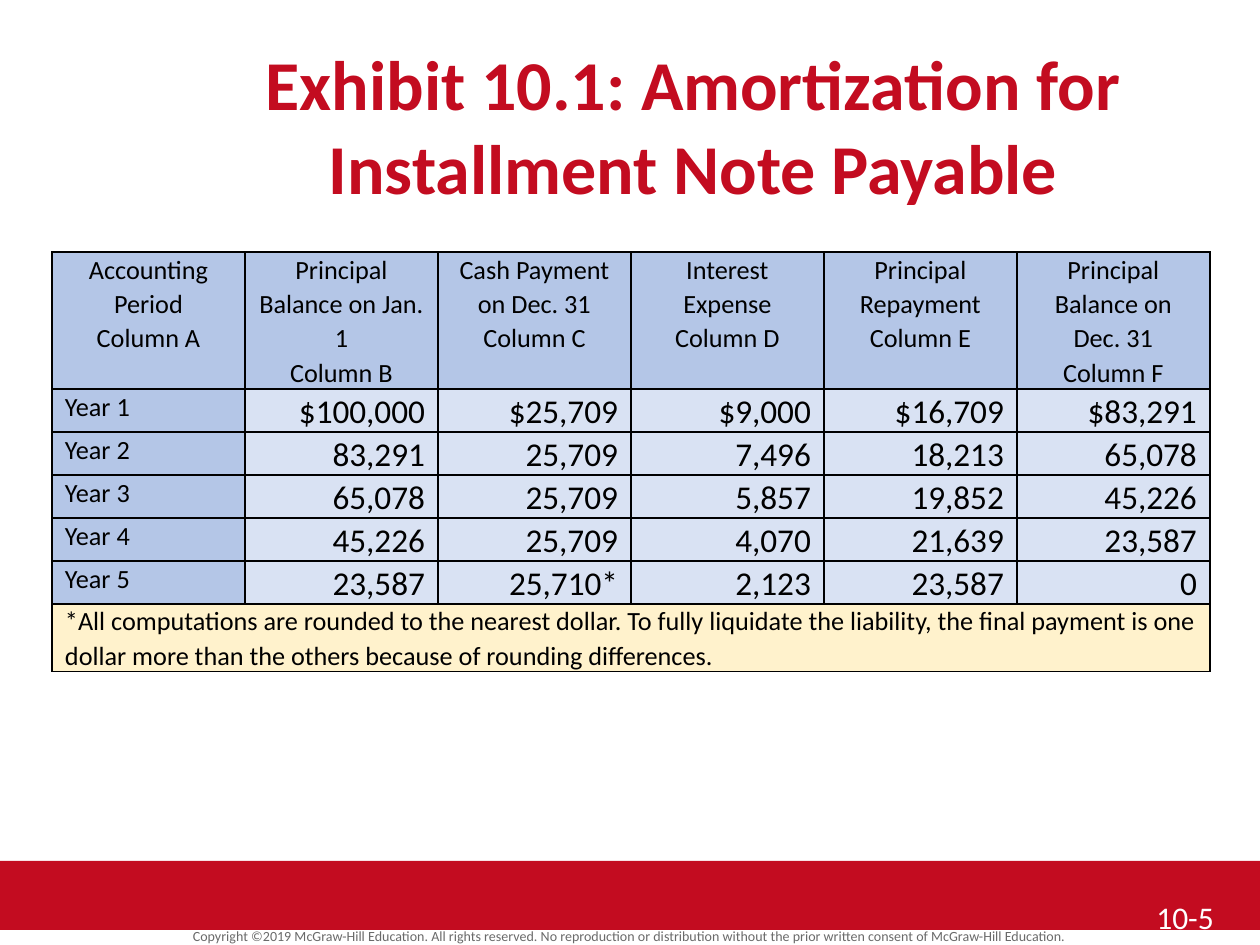
from lxml.etree import SubElement
from pptx import Presentation
from pptx.dml.color import RGBColor
from pptx.enum.shapes import MSO_SHAPE
from pptx.enum.text import PP_ALIGN as Align
from pptx.oxml.ns import qn
from pptx.util import Pt

PX = 914400 // 126
FONT = "Calibri"

RED = RGBColor(0xC3, 0x0C, 0x20)
GRAY = RGBColor(0x6A, 0x6A, 0x6A)
WHITE = RGBColor(0xFF, 0xFF, 0xFF)
BLACK = RGBColor(0x00, 0x00, 0x00)
HEADER_BLUE = RGBColor(0xB4, 0xC6, 0xE7)
BODY_BLUE = RGBColor(0xD9, 0xE2, 0xF3)
NOTE_YELLOW = RGBColor(0xFF, 0xF2, 0xCC)

TITLE = "Exhibit 10.1: Amortization for Installment Note Payable"
COPYRIGHT = ("Copyright ©2019 McGraw-Hill Education. All rights reserved. No reproduction or "
             "distribution without the prior written consent of McGraw-Hill Education.")
PAGE_NUMBER = "10-5"
HEADERS = [
    ["Accounting Period", "Column A"],
    ["Principal Balance on Jan. 1", "Column B"],
    ["Cash Payment on Dec. 31 Column C"],
    ["Interest Expense Column D"],
    ["Principal Repayment Column E"],
    ["Principal Balance on Dec. 31 Column F"],
]
YEARS = [
    ("Year 1", "$100,000", "$25,709", "$9,000", "$16,709", "$83,291"),
    ("Year 2", "83,291", "25,709", "7,496", "18,213", "65,078"),
    ("Year 3", "65,078", "25,709", "5,857", "19,852", "45,226"),
    ("Year 4", "45,226", "25,709", "4,070", "21,639", "23,587"),
    ("Year 5", "23,587", "25,710*", "2,123", "23,587", "0"),
]
FOOTNOTE = ("*All computations are rounded to the nearest dollar. To fully liquidate the liability, "
            "the final payment is one dollar more than the others because of rounding differences.")

TABLE_LEFT, TABLE_TOP, COLUMN_WIDTH = 52, 252, 193
ROW_HEIGHTS = [137] + [43] * len(YEARS) + [68]


def px(*lengths):
    return [length * PX for length in lengths]


def write(frame, lines, size, color, align, spacing=1.0, bold=False):
    frame.word_wrap = True
    for index, line in enumerate(lines):
        para = frame.paragraphs[0] if index == 0 else frame.add_paragraph()
        para.alignment = align
        para.line_spacing = spacing
        span = para.add_run()
        span.text = line
        span.font.name = FONT
        span.font.size = Pt(size)
        span.font.bold = bold
        span.font.color.rgb = color


def add_text(page, place, text, *style, **options):
    box = page.shapes.add_textbox(*px(*place))
    write(box.text_frame, [text], *style, **options)


def add_borders(cell):
    properties = cell._tc.get_or_add_tcPr()
    for side in ("a:lnL", "a:lnR", "a:lnT", "a:lnB"):
        line = SubElement(properties, qn(side), w=str(Pt(1)))
        fill = SubElement(line, qn("a:solidFill"))
        SubElement(fill, qn("a:srgbClr"), val=str(BLACK))


def fill_cell(cell, lines, size, align, color):
    cell.margin_left, cell.margin_right = px(13, 13)
    cell.margin_top = cell.margin_bottom = 0
    add_borders(cell)
    cell.fill.solid()
    cell.fill.fore_color.rgb = color
    write(cell.text_frame, lines, size, BLACK, align, spacing=1.07)


def add_schedule(page):
    columns = len(HEADERS)
    place = px(TABLE_LEFT, TABLE_TOP, COLUMN_WIDTH * columns, sum(ROW_HEIGHTS))
    table = page.shapes.add_table(len(ROW_HEIGHTS), columns, *place).table
    table.first_row = table.horz_banding = False
    for column in table.columns:
        column.width = COLUMN_WIDTH * PX
    for row, height in zip(table.rows, ROW_HEIGHTS):
        row.height = height * PX

    for column, lines in enumerate(HEADERS):
        fill_cell(table.cell(0, column), lines, 15, Align.CENTER, HEADER_BLUE)
    for row, (year, *amounts) in enumerate(YEARS, start=1):
        fill_cell(table.cell(row, 0), [year], 15, Align.LEFT, HEADER_BLUE)
        for column, amount in enumerate(amounts, start=1):
            fill_cell(table.cell(row, column), [amount], 19, Align.RIGHT, BODY_BLUE)

    last = len(ROW_HEIGHTS) - 1
    table.cell(last, 0).merge(table.cell(last, columns - 1))
    fill_cell(table.cell(last, 0), [FOOTNOTE], 15, Align.LEFT, NOTE_YELLOW)
    for column in range(1, columns):
        add_borders(table.cell(last, column))


def main():
    deck = Presentation()
    deck.slide_width, deck.slide_height = px(1260, 945)
    page = deck.slides.add_slide(deck.slide_layouts[6])

    band = page.shapes.add_shape(MSO_SHAPE.RECTANGLE, *px(0, 861, 1260, 69))
    band.shadow.inherit = False
    band.fill.solid()
    band.fill.fore_color.rgb = RED
    band.line.fill.background()

    add_text(page, (0, 925, 1260, 24), COPYRIGHT, 8, GRAY, Align.CENTER, spacing=0.8)
    add_text(page, (126, 34, 1134, 84), TITLE, 40, RED, Align.CENTER, bold=True)
    add_text(page, (1144, 892, 116, 53), PAGE_NUMBER, 18, WHITE, Align.LEFT)
    add_schedule(page)
    deck.save("out.pptx")


if __name__ == "__main__":
    main()
